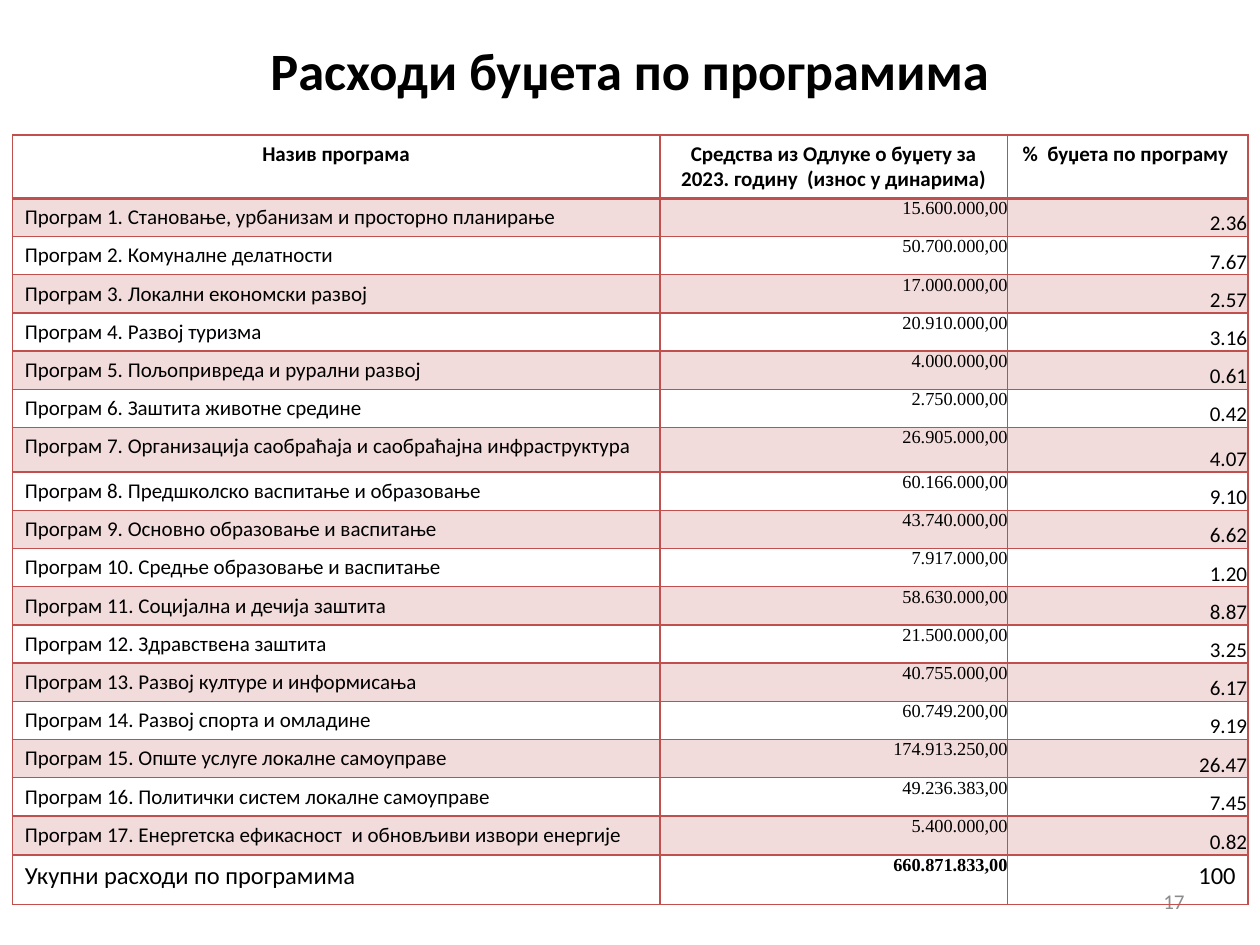
"""Build the slide with budget expenditure by programme."""
from dataclasses import dataclass
from typing import NamedTuple

from lxml import etree
from pptx import Presentation, util as u
from pptx.dml import color
from pptx.enum import text
from pptx.oxml import ns


@dataclass(frozen=True)
class Theme:
    sans: str = "Calibri"
    serif: str = "Times New Roman"
    ink: str = "000000"
    muted: str = "8C8C8C"
    accent: str = "C0504D"
    band_alpha: int = 20
    title: float = 30
    total: float = 14
    body: float = 12
    amount: float = 10.5
    line: float = 1
    header_line: float = 2


T = Theme()
LEFT, CENTER, RIGHT = text.PP_ALIGN.LEFT, text.PP_ALIGN.CENTER, text.PP_ALIGN.RIGHT
TOP, MIDDLE, BOTTOM = text.MSO_ANCHOR.TOP, text.MSO_ANCHOR.MIDDLE, text.MSO_ANCHOR.BOTTOM
NO_STYLE = "{2D5ABB26-0587-4C30-8999-92F81FD0307C}"


class Style(NamedTuple):
    size: float = T.body
    align: int = LEFT
    bold: bool = False
    font: str = T.sans
    ink: str = T.ink
    anchor: int = TOP
    insets: tuple[float, float, float, float] = (0.25, 0.13, 0.25, 0.13)


class Program(NamedTuple):
    name: str
    amount: str
    share: str
    height: float = 0.77


HEADER = Program("Назив програма",
                 "Средства из Одлуке о буџету за 2023. годину  (износ у динарима)",
                 "%  буџета по програму ", 1.27)
PROGRAMS = [
    Program("Становање, урбанизам и просторно планирање", "15.600.000,00", "2.36"),
    Program("Комуналне делатности", "50.700.000,00", "7.67"),
    Program("Локални економски развој", "17.000.000,00", "2.57"),
    Program("Развој туризма", "20.910.000,00", "3.16"),
    Program("Пољопривреда и рурални развој", "4.000.000,00", "0.61"),
    Program("Заштита животне средине", "2.750.000,00", "0.42"),
    Program("Организација саобраћаја и саобраћајна инфраструктура", "26.905.000,00", "4.07", 0.9),
    Program("Предшколско васпитање и образовање", "60.166.000,00", "9.10"),
    Program("Основно образовање и васпитање", "43.740.000,00", "6.62"),
    Program("Средње образовање и васпитање", "7.917.000,00", "1.20"),
    Program("Социјална и дечија заштита", "58.630.000,00", "8.87"),
    Program("Здравствена заштита", "21.500.000,00", "3.25"),
    Program("Развој културе и информисања", "40.755.000,00", "6.17"),
    Program("Развој спорта и омладине", "60.749.200,00", "9.19"),
    Program("Опште услуге локалне самоуправе", "174.913.250,00", "26.47"),
    Program("Политички систем локалне самоуправе", "49.236.383,00", "7.45"),
    Program("Енергетска ефикасност  и обновљиви извори енергије", "5.400.000,00", "0.82", 0.79),
]
TOTAL = Program("Укупни расходи по програмима", "660.871.833,00", "100", 1.0)
COLUMNS = (13.05, 7.01, 4.85)

HEAD = Style(align=CENTER, bold=True)
AMOUNT = Style(T.amount, RIGHT, font=T.serif, insets=(0, 0, 0, 0))
SHARE = Style(align=RIGHT, anchor=BOTTOM, insets=(0.02, 0.02, 0.02, 0))
HEAD_STYLES = (HEAD, HEAD, HEAD)
BODY_STYLES = (Style(), AMOUNT, SHARE)
TOTAL_STYLES = (Style(T.total), AMOUNT._replace(bold=True), Style(T.total, RIGHT))


def write(tf, content: str, style: Style) -> None:
    """Write one styled run into a text frame."""
    p = tf.paragraphs[0]
    p.alignment = style.align
    r = p.add_run()
    r.text = content
    r.font.size = u.Pt(style.size)
    r.font.name = style.font
    r.font.bold = style.bold
    r.font.color.rgb = color.RGBColor.from_string(style.ink)


def add_label(s, box: tuple[float, float, float, float], content: str, style: Style) -> None:
    """Add a text box with one line of text."""
    tf = s.shapes.add_textbox(*map(u.Cm, box)).text_frame
    tf.word_wrap = True
    tf.vertical_anchor = style.anchor
    write(tf, content, style)


def add_solid(parent, rgb: str):
    """Append a solid fill and return its colour element."""
    fill = etree.SubElement(parent, ns.qn("a:solidFill"))
    return etree.SubElement(fill, ns.qn("a:srgbClr"), val=rgb)


def format_cell(cell, style: Style, banded: bool, top: float, bottom: float) -> None:
    """Set the insets, borders and fill of a cell."""
    cell.margin_left, cell.margin_top, cell.margin_right, cell.margin_bottom = map(u.Cm, style.insets)
    cell.vertical_anchor = style.anchor
    tc_pr = cell._tc.get_or_add_tcPr()
    for side, width in (("L", T.line), ("R", T.line), ("T", top), ("B", bottom)):
        ln = etree.SubElement(tc_pr, ns.qn(f"a:ln{side}"), w=str(u.Pt(width)))
        add_solid(ln, T.accent)
    if banded:
        tint = add_solid(tc_pr, T.accent)
        etree.SubElement(tint, ns.qn("a:alpha"), val=str(T.band_alpha * 1000))
    else:
        cell.fill.background()


def add_budget_table(s) -> None:
    """Add the table of programmes, amounts and shares."""
    named = [p._replace(name=f"Програм {i}. {p.name}") for i, p in enumerate(PROGRAMS, 1)]
    rows = [HEADER, *named, TOTAL]
    styles = [HEAD_STYLES, *[BODY_STYLES] * len(named), TOTAL_STYLES]
    height = sum(row.height for row in rows)
    frame = s.shapes.add_table(len(rows), len(COLUMNS), u.Cm(0.25), u.Cm(2.72),
                               u.Cm(sum(COLUMNS)), u.Cm(height))
    table = frame.table
    table.first_row = table.horz_banding = False
    table._tbl.tblPr.find(ns.qn("a:tableStyleId")).text = NO_STYLE
    for column, width in zip(table.columns, COLUMNS):
        column.width = u.Cm(width)
    for i, (row, row_styles) in enumerate(zip(rows, styles)):
        table.rows[i].height = u.Cm(row.height)
        top = T.header_line if i == 1 else T.line
        bottom = T.header_line if i == 0 else T.line
        for j, (content, style) in enumerate(zip(row[:3], row_styles)):
            cell = table.cell(i, j)
            write(cell.text_frame, content, style)
            format_cell(cell, style, i % 2 == 1, top, bottom)


def main() -> None:
    """Create and save the presentation."""
    prs = Presentation()
    prs.slide_width, prs.slide_height = u.Cm(25.4), u.Cm(19.05)
    s = prs.slides.add_slide(prs.slide_layouts[6])
    add_label(s, (1.88, 0.33, 21.64, 2.16), "Расходи буџета по програмима",
              Style(T.title, CENTER, True, anchor=MIDDLE))
    add_label(s, (18.21, 17.65, 5.92, 1.02), "17", Style(align=RIGHT, ink=T.muted, anchor=MIDDLE))
    add_budget_table(s)
    prs.save("out.pptx")


if __name__ == "__main__":
    main()
